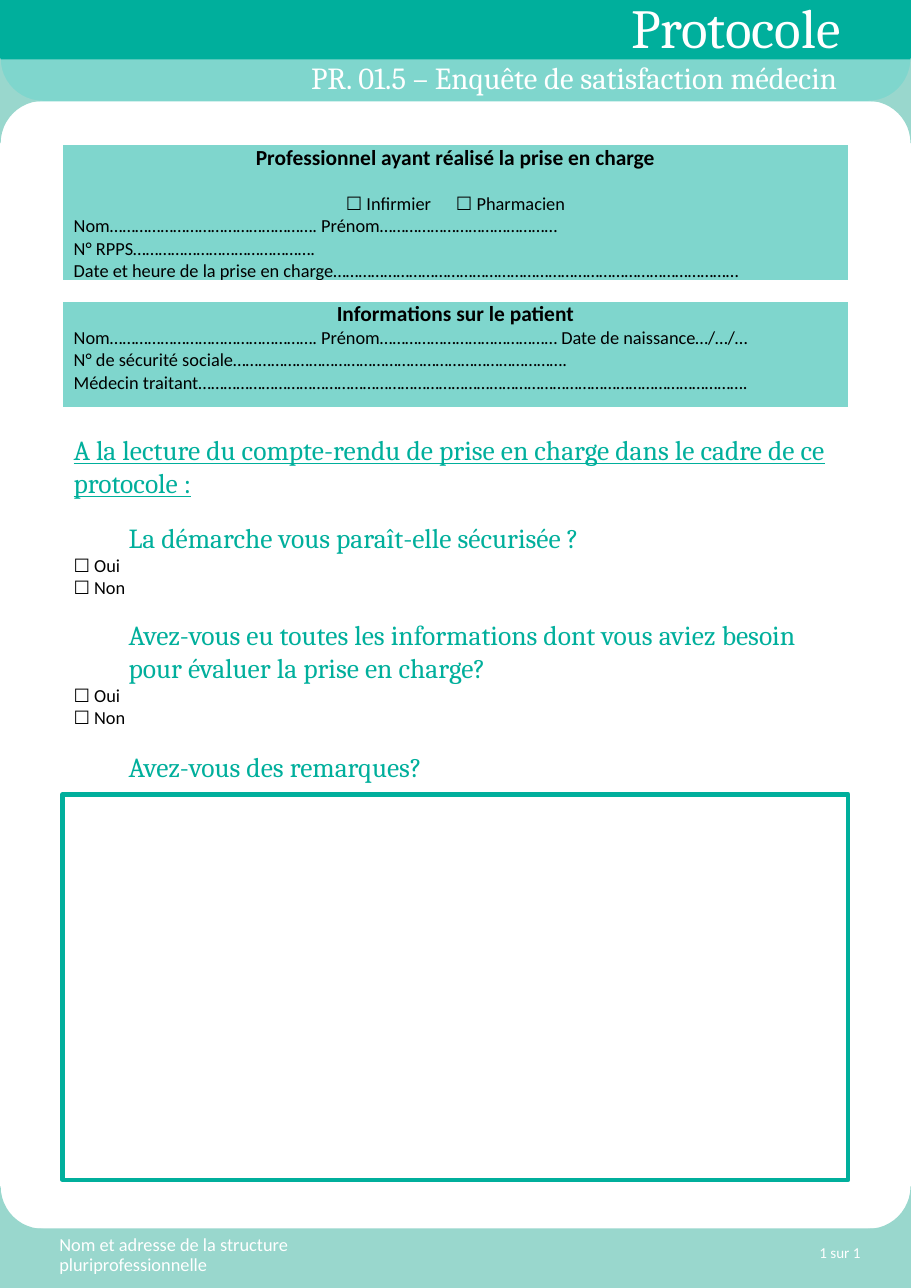
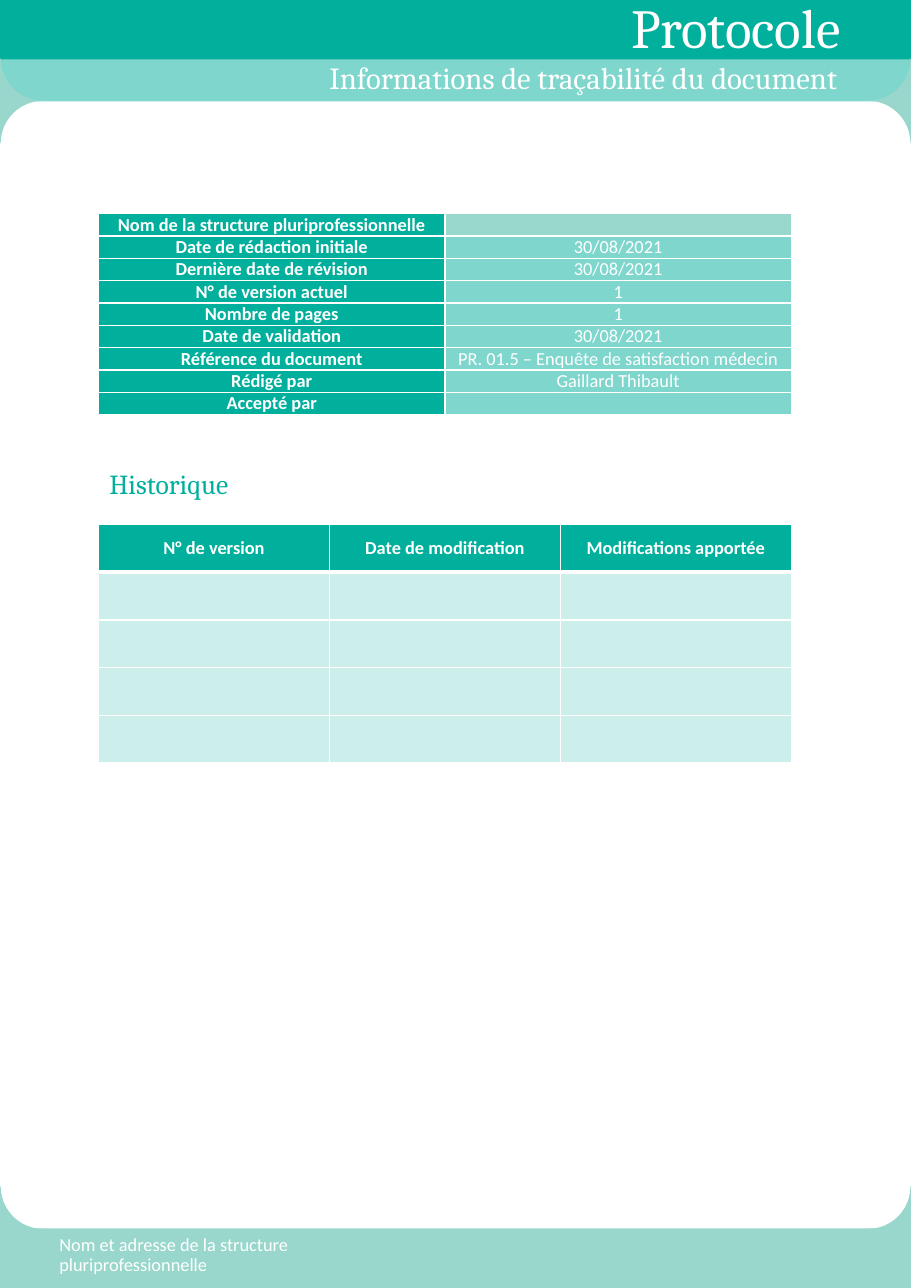
from lxml import etree
from pptx import Presentation
from pptx.dml.color import RGBColor
from pptx.enum import shapes, text
from pptx.oxml import ns
from pptx.util import Pt

WIDE, HIGH = 595.44, 841.68
GREEN, PALE, MINT = "00AF9C", "99D7CD", "99D8CD"
WHITE, BLACK = "FFFFFF", "000000"
SANS, SERIF = "Calibri", "Cambria"
LEFT, MID, RIGHT = text.PP_ALIGN.LEFT, text.PP_ALIGN.CENTER, text.PP_ALIGN.RIGHT
RECT, PLAQUE = shapes.MSO_SHAPE.RECTANGLE, shapes.MSO_SHAPE.PLAQUE
CENTER = text.MSO_ANCHOR.MIDDLE
REF = "PR. 01.5 – Enquête de satisfaction médecin"


# Basic tools
def hue(code):
    return RGBColor.from_string(code)


def paint(fill, node, code, alpha=100):
    fill.solid()
    fill.fore_color.rgb = hue(code)
    if alpha < 100:
        clr = node.find(ns.qn("a:solidFill")).find(ns.qn("a:srgbClr"))
        etree.SubElement(clr, ns.qn("a:alpha"), val=str(alpha * 1000))


def write(frame, words, size=12, font=SANS, color=BLACK, bold=False,
          under=False, align=LEFT, line=None, before=0, indent=0):
    para = frame.paragraphs[0]
    if para.runs:
        para = frame.add_paragraph()
    para.alignment = align
    if line:
        para.line_spacing = line
    if before:
        para.space_before = Pt(before)
    if indent:
        para._p.get_or_add_pPr().set("marL", str(int(Pt(indent))))
    run = para.add_run()
    run.text = words
    style = run.font
    style.size, style.name, style.bold, style.underline = Pt(size), font, bold, under
    style.color.rgb = hue(color)


def frame(slide, box, anchor=text.MSO_ANCHOR.TOP):
    area = slide.shapes.add_textbox(*map(Pt, box)).text_frame
    area.word_wrap = True
    area.vertical_anchor = anchor
    return area


def shape(slide, kind, box, code=None, alpha=100, line=None):
    item = slide.shapes.add_shape(kind, *map(Pt, box))
    item.shadow.inherit = False
    if code:
        paint(item.fill, item._element.spPr, code, alpha)
    else:
        item.fill.background()
    if line:
        item.line.color.rgb = hue(line)
        item.line.width = Pt(3)
    else:
        item.line.fill.background()
    return item


# Tables
def grid(slide, box, rows, cols):
    x, y, w, h = box
    table = slide.shapes.add_table(rows, cols, *map(Pt, box)).table
    table.first_row = table.horz_banding = False
    for col in table.columns:
        col.width = Pt(w / cols)
    for row in table.rows:
        row.height = Pt(h / rows)
    return table


def edge(cell, top=1, bottom=1):
    props = cell._tc.get_or_add_tcPr()
    widths = {"lnL": 1, "lnR": 1, "lnT": top, "lnB": bottom}
    for spot, (name, width) in enumerate(widths.items()):
        line = etree.Element(ns.qn("a:" + name), w=str(int(Pt(width))))
        fill = etree.SubElement(line, ns.qn("a:solidFill"))
        etree.SubElement(fill, ns.qn("a:srgbClr"), val=WHITE)
        props.insert(spot, line)


def dress(cell, code, alpha=100, side=5, top=1, bottom=1):
    cell.margin_left = cell.margin_right = Pt(side)
    cell.margin_top = cell.margin_bottom = 0
    paint(cell.fill, cell._tc.get_or_add_tcPr(), code, alpha)
    edge(cell, top, bottom)


def fill_in(cell, words, bold=False):
    cell.vertical_anchor = CENTER
    if words:
        write(cell.text_frame, words, color=WHITE, bold=bold, align=MID)
    else:
        para = cell.text_frame.paragraphs[0]._p
        etree.SubElement(para, ns.qn("a:endParaRPr"), sz="1200")


def card(slide, box, head, lines):
    cell = grid(slide, box, 1, 1).cell(0, 0)
    dress(cell, GREEN, 50, side=7.2)
    write(cell.text_frame, head, size=14, bold=True, align=MID)
    for words, style in lines:
        write(cell.text_frame, words, **style)


def facts(slide, box, pairs):
    table = grid(slide, box, len(pairs), 2)
    for row, (label, value) in enumerate(pairs):
        name, info = table.cell(row, 0), table.cell(row, 1)
        dress(name, GREEN)
        fill_in(name, label, bold=True)
        dress(info, GREEN if row else MINT, 50 if row else 100)
        fill_in(info, value)


def history(slide, box, heads, count):
    table = grid(slide, box, count + 1, len(heads))
    for col, head in enumerate(heads):
        for row in range(count + 1):
            cell = table.cell(row, col)
            dress(cell, GREEN, 20 if row else 100,
                  top=3 if row == 1 else 1, bottom=1 if row else 3)
            fill_in(cell, "" if row else head, bold=True)


# Bands and corners shared by both pages
def page(deck, title):
    slide = deck.slides.add_slide(deck.slide_layouts[6])
    shape(slide, RECT, (0, 35.3, WIDE, 31), GREEN, 50)
    shape(slide, RECT, (0, 0, WIDE, 38.9), GREEN)
    shape(slide, RECT, (0, 802.8, WIDE, HIGH - 802.8), PALE)
    for top in (38.2, 775.4):
        for left in (-31.7, WIDE - 28):
            notch = shape(slide, PLAQUE, (left, top, 59.8, 55.4), PALE)
            notch.adjustments[0] = 0.5
    write(frame(slide, (405.4, -7.9, 190, 51.1)), "Protocole",
          size=36, font=SERIF, color=WHITE)
    write(frame(slide, (110.9, 37.4, 443.5, 28.8), CENTER), title,
          size=20, font=SERIF, color=WHITE, align=RIGHT, line=0.9)
    write(frame(slide, (31.7, 804.2, 194.4, 34.6)),
          "Nom et adresse de la structure pluriprofessionnelle",
          color=WHITE, line=0.9)
    return slide


# Questions with their answers
def survey(slide, box, intro, asks):
    area = frame(slide, box)
    head = dict(size=18, font=SERIF, color=GREEN)
    write(area, intro, under=True, **head)
    for ask, gap, answers in asks:
        write(area, ask, before=gap, indent=36, **head)
        for answer in answers:
            write(area, "☐ " + answer)


def form(deck):
    slide = page(deck, REF)
    left, width = 41, 513.4
    write(frame(slide, (439.2, 807.1, 130.3, 22.3), CENTER), "1 sur 1",
          size=9.9, color=WHITE, align=RIGHT)
    card(slide, (left, 94.5, width, 88.6),
         "Professionnel ayant réalisé la prise en charge", [
             ("☐ Infirmier\t☐ Pharmacien", dict(align=MID, before=14.6)),
             ("Nom…………………………………………. Prénom……………………………………", {}),
             ("N° RPPS…………………………………….", {}),
             ("Date et heure de la prise en charge"
              "……………………………………………………………………………………", {})])
    card(slide, (left, 196.6, width, 69.8), "Informations sur le patient", [
        ("Nom…………………………………………. Prénom…………………………………… "
         "Date de naissance…/…/…", {}),
        ("N° de sécurité sociale…………………………………………………………………….", {}),
        ("Médecin traitant"
         "………………………………………………………………………………………………………………….", {})])
    both = ("Oui", "Non")
    survey(slide, (left, 279.4, width, 252.7),
           "A la lecture du compte-rendu de prise en charge "
           "dans le cadre de ce protocole :", [
               ("La démarche vous paraît-elle sécurisée ?", 14.4, both),
               ("Avez-vous eu toutes les informations dont vous aviez besoin "
                "pour évaluer la prise en charge?", 12.6, both),
               ("Avez-vous des remarques?", 14.6, ())])
    shape(slide, RECT, (left, 519.1, width, 252), line=GREEN)


def trace(deck):
    slide = page(deck, "Informations de traçabilité du document")
    left, width, day = 64.4, 452.9, "30/08/2021"
    facts(slide, (left, 139.7, width, 131.4), [
        ("Nom de la structure pluriprofessionnelle", ""),
        ("Date de rédaction initiale", day),
        ("Dernière date de révision", day),
        ("N° de version actuel", "1"),
        ("Nombre de pages", "1"),
        ("Date de validation", day),
        ("Référence du document", REF),
        ("Rédigé par", "Gaillard Thibault"),
        ("Accepté par", "")])
    history(slide, (left, 342.7, width, 156),
            ("N° de version", "Date de modification", "Modifications apportée"), 4)
    write(frame(slide, (left, 301.7, width / 2, 28.8)), "Historique",
          size=18, font=SERIF, color=GREEN)


def main():
    deck = Presentation()
    deck.slide_width, deck.slide_height = Pt(WIDE), Pt(HIGH)
    form(deck)
    trace(deck)
    deck.save("out.pptx")


if __name__ == "__main__":
    main()
